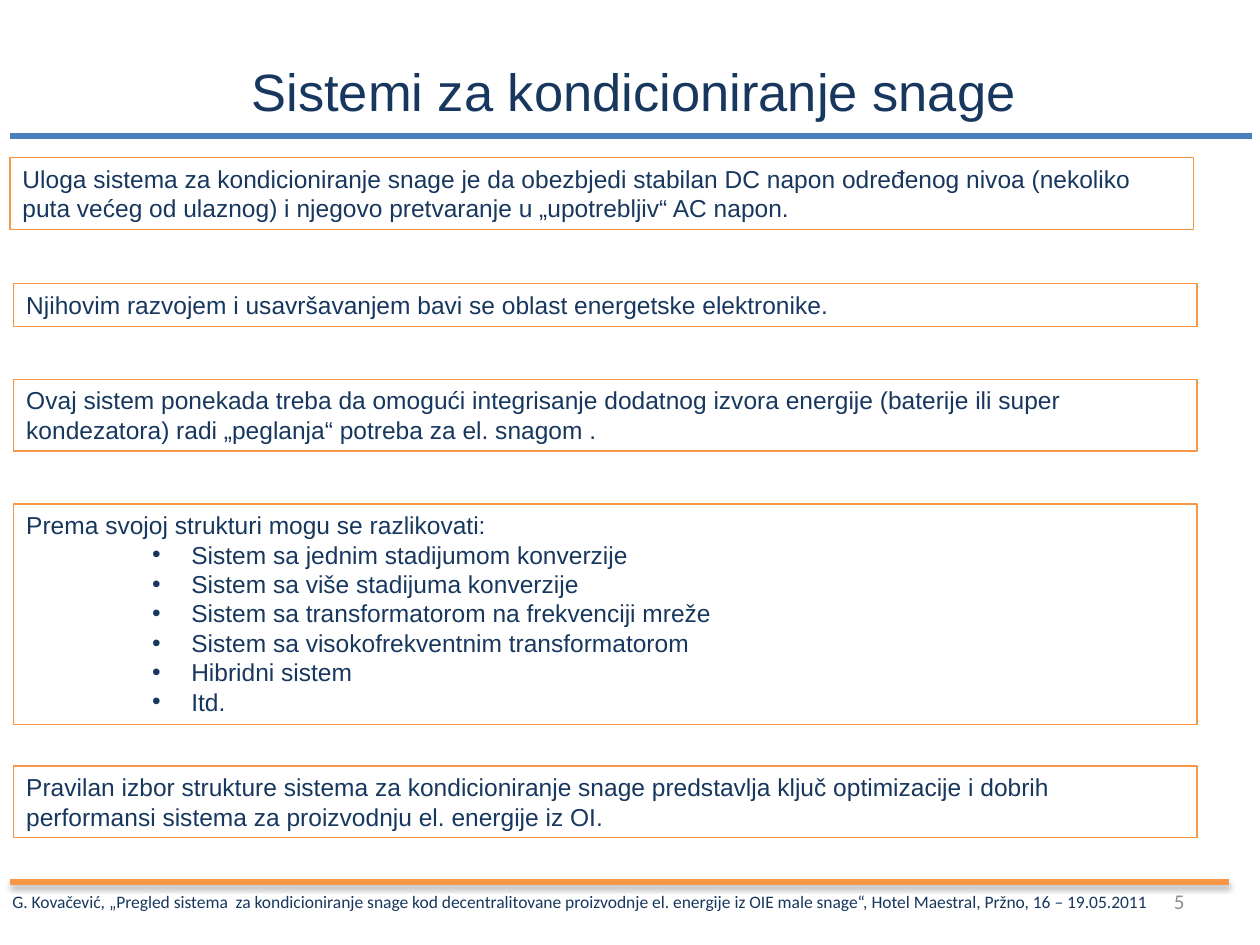
"""Build the slide on power conditioning systems."""
from lxml import etree
from pptx import Presentation
from pptx.dml.color import RGBColor
from pptx.enum.shapes import MSO_CONNECTOR, MSO_SHAPE
from pptx.enum.text import MSO_ANCHOR, MSO_AUTO_SIZE, PP_ALIGN
from pptx.oxml import parse_xml
from pptx.oxml.ns import nsdecls, qn
from pptx.util import Inches, Pt

STRAIGHT = MSO_CONNECTOR.STRAIGHT
RECTANGLE = MSO_SHAPE.RECTANGLE
TOP, MIDDLE = MSO_ANCHOR.TOP, MSO_ANCHOR.MIDDLE
GROW = MSO_AUTO_SIZE.SHAPE_TO_FIT_TEXT
LEFT, CENTER, RIGHT = PP_ALIGN.LEFT, PP_ALIGN.CENTER, PP_ALIGN.RIGHT

COLORS = {"navy": "17375E", "blue": "4B7EBC", "orange": "F79646", "gray": "8C8C8C"}

BOX_WIDTH = 9.39
BOXES = [
    (0.08, 1.25, 0.57, "Uloga sistema za kondicioniranje snage je da obezbjedi stabilan DC napon "
     "određenog nivoa (nekoliko puta većeg od ulaznog) i njegovo pretvaranje u „upotrebljiv“ AC napon.", []),
    (0.11, 2.25, 0.34, "Njihovim razvojem i usavršavanjem bavi se oblast energetske elektronike.", []),
    (0.11, 3.01, 0.57, "Ovaj sistem ponekada treba da omogući integrisanje dodatnog izvora energije "
     "(baterije ili super kondezatora) radi „peglanja“ potreba za el. snagom .", []),
    (0.11, 4, 1.75, "Prema svojoj strukturi mogu se razlikovati:", [
        "Sistem sa jednim stadijumom konverzije",
        "Sistem sa više stadijuma konverzije",
        "Sistem sa transformatorom na frekvenciji mreže",
        "Sistem sa visokofrekventnim transformatorom",
        "Hibridni sistem",
        "Itd.",
    ]),
    (0.11, 6.08, 0.57, "Pravilan izbor strukture sistema za kondicioniranje snage predstavlja ključ "
     "optimizacije i dobrih performansi sistema za proizvodnju el. energije iz OI.", []),
]
CITATION = ("G. Kovačević, „Pregled sistema  za kondicioniranje snage kod decentralitovane proizvodnje "
            "el. energije iz OIE male snage“, Hotel Maestral, Pržno, 16 – 19.05.2011")


def rgb(name):
    """Return the named palette colour."""
    return RGBColor.from_string(COLORS[name])


def format_runs(p, size, font, color):
    """Set the font of every run in a paragraph."""
    for r in p.runs:
        r.font.size = Pt(size)
        r.font.name = font
        r.font.color.rgb = rgb(color)


def add_rule(s, x1, x2, y, color, shadow=False):
    """Add a horizontal rule, optionally with a soft shadow below."""
    line = s.shapes.add_connector(STRAIGHT, Inches(x1), Inches(y), Inches(x2), Inches(y))
    line.line.color.rgb = rgb(color)
    line.line.width = Pt(3)
    effects = parse_xml(f"<a:effectLst {nsdecls('a')}/>")
    if shadow:
        outer = etree.SubElement(effects, qn("a:outerShdw"), blurRad=str(Pt(3.1)),
                                 dist=str(Pt(1.8)), dir="5400000", rotWithShape="0")
        black = etree.SubElement(outer, qn("a:srgbClr"), val="000000")
        etree.SubElement(black, qn("a:alpha"), val="35000")
    line._element.spPr.append(effects)


def add_text(s, box, text, size, font, color, align=LEFT, wrap=True, anchor=TOP, fit=GROW):
    """Add a text box with one paragraph."""
    tf = s.shapes.add_textbox(*map(Inches, box)).text_frame
    tf.text = text
    tf.word_wrap = wrap
    tf.auto_size = fit
    tf.vertical_anchor = anchor
    p = tf.paragraphs[0]
    p.alignment = align
    format_runs(p, size, font, color)


def add_bullet(p):
    """Give a paragraph a hanging round bullet at the third level."""
    p.level = 2
    pPr = p._p.get_or_add_pPr()
    pPr.set("marL", str(Inches(1.31)))
    pPr.set("indent", str(Inches(-0.31)))
    etree.SubElement(pPr, qn("a:buFont"), typeface="Arial")
    etree.SubElement(pPr, qn("a:buChar"), char="•")


def add_box(s, left, top, height, text, bullets):
    """Add an outlined box with a statement and its bullets."""
    sp = s.shapes.add_shape(RECTANGLE, *map(Inches, (left, top, BOX_WIDTH, height)))
    sp.shadow.inherit = False
    sp.fill.background()
    sp.line.color.rgb = rgb("orange")
    sp.line.width = Pt(0.75)
    tf = sp.text_frame
    tf.text = text
    tf.word_wrap = True
    tf.auto_size = GROW
    tf.vertical_anchor = TOP
    for bullet in bullets:
        p = tf.add_paragraph()
        p.text = bullet
        add_bullet(p)
    for p in tf.paragraphs:
        p.alignment = LEFT
        format_runs(p, 14, "Arial", "navy")


def main():
    """Assemble and save the slide."""
    prs = Presentation()
    prs.slide_width, prs.slide_height = Inches(10), Inches(7.5)
    s = prs.slides.add_slide(prs.slide_layouts[6])
    add_rule(s, 0.08, 9.94, 1.08, "blue")
    add_rule(s, 0.08, 9.75, 7, "orange", shadow=True)
    add_text(s, (1.87, 0.42, 6.32, 0.61), "Sistemi za kondicioniranje snage", 30, "Arial", "navy",
             align=CENTER, wrap=False)
    add_text(s, (0, 7.02, 9.33, 0.27), CITATION, 10, "Calibri", "navy")
    for box in BOXES:
        add_box(s, *box)
    add_text(s, (7.17, 6.95, 2.33, 0.4), "5", 12, "Calibri", "gray",
             align=RIGHT, anchor=MIDDLE, fit=MSO_AUTO_SIZE.NONE)
    prs.save("out.pptx")


if __name__ == "__main__":
    main()
